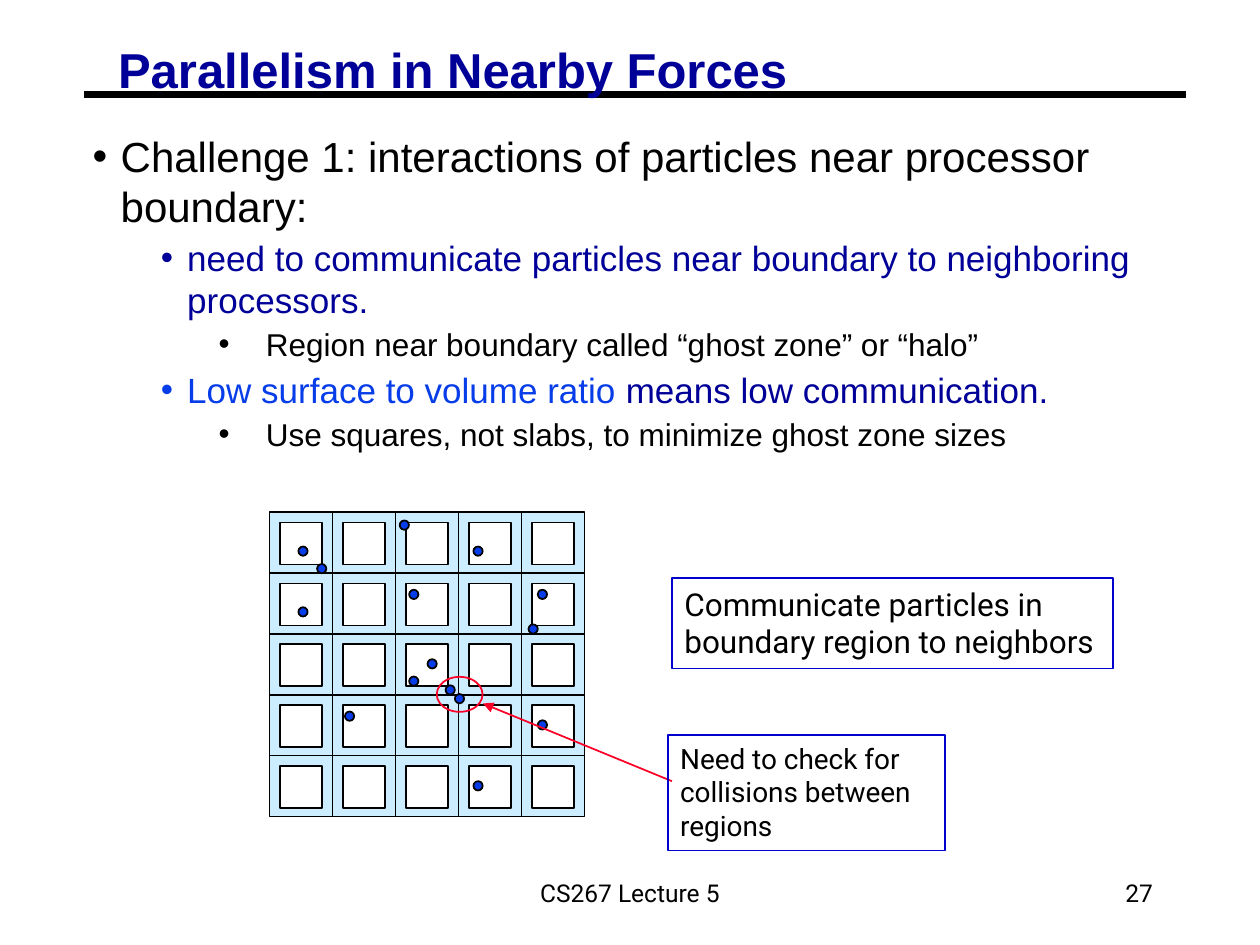
"""Build the slide on parallelism in nearby forces."""
from lxml import etree
from pptx import Presentation
from pptx.dml.color import RGBColor
from pptx.enum.shapes import MSO_CONNECTOR, MSO_SHAPE
from pptx.enum.text import MSO_ANCHOR, MSO_AUTO_SIZE, PP_ALIGN
from pptx.oxml.ns import qn
from pptx.util import Pt

RECT, OVAL = MSO_SHAPE.RECTANGLE, MSO_SHAPE.OVAL
LINE = MSO_CONNECTOR.STRAIGHT
TOP, MID = MSO_ANCHOR.TOP, MSO_ANCHOR.MIDDLE
LEFT, MIDDLE, RIGHT = PP_ALIGN.LEFT, PP_ALIGN.CENTER, PP_ALIGN.RIGHT
FIXED = MSO_AUTO_SIZE.NONE

THEME = {
    "head": "Arial", "note": "Roboto",
    "black": "000000", "white": "FFFFFF", "navy": "000099", "blue": "063DE8",
    "edge": "0000CC", "pale": "CCECFF", "red": "FC0128",
    "title": 28, "levels": (24, 20, 18), "foot": 14,
}
INDENTS = ((16, -16), (54, -15), (99, -27))

TITLE = "Parallelism in Nearby Forces"
BODY = [
    (0, [("Challenge 1: interactions of particles near processor boundary:", "black")]),
    (1, [("need to communicate particles near boundary to neighboring processors.", "navy")]),
    (2, [("Region near boundary called “ghost zone” or “halo”", "black")]),
    (1, [("Low surface to volume ratio ", "blue"), ("means low communication.", "navy")]),
    (2, [("Use squares, not slabs, to minimize ghost zone sizes", "black")]),
]
NOTES = [
    ("Communicate particles in boundary region to neighbors", (384, 330.5, 252, 51.5), 18),
    ("Need to check for collisions between regions", (381.6, 420, 158.4, 66), 16),
]
FOOTS = [
    ("CS267 Lecture 5", (246, 492, 228, 36), MIDDLE),
    ("27", (516, 492, 150, 36), RIGHT),
]
GRID = {"left": 154, "top": 292.6, "wide": 36, "high": 34.8, "count": 5, "inset": 6, "core": 24}
DOT = 5.3
DOTS = [
    (170.5, 312.3), (181.2, 322.3), (170.5, 347), (233.8, 386.6), (228.4, 297.4),
    (244.3, 376.7), (197.1, 406.6), (254.6, 391.6), (302, 356.8), (259.9, 396.6),
    (270.5, 312.3), (270.5, 446.4), (307.3, 411.6), (307.3, 337), (233.8, 337),
]
RING = (249.6, 386.8, 26.2, 20)


def color(name):
    return RGBColor.from_string(THEME[name])


def place(shape, box):
    shape.left, shape.top, shape.width, shape.height = map(Pt, box)


def setup(frame, pad=(7.2, 3.6), anchor=TOP):
    frame.word_wrap = True
    frame.auto_size = FIXED
    frame.vertical_anchor = anchor
    frame.margin_left = frame.margin_right = Pt(pad[0])
    frame.margin_top = frame.margin_bottom = Pt(pad[1])


def write(para, text, size, font="note", ink="black", bold=False, align=LEFT):
    para.alignment = align
    run = para.add_run()
    run.text = text
    run.font.size, run.font.bold = Pt(size), bold
    run.font.name = THEME[font]
    run.font.color.rgb = color(ink)


def bullet(para, level):
    para.level = level
    props = para._p.get_or_add_pPr()
    margin, indent = INDENTS[level]
    props.set("marL", str(Pt(margin)))
    props.set("indent", str(Pt(indent)))
    space = etree.SubElement(props, qn("a:spcBef"))
    etree.SubElement(space, qn("a:spcPct")).set("val", "15000")
    etree.SubElement(props, qn("a:buFont")).set("typeface", THEME["head"])
    etree.SubElement(props, qn("a:buChar")).set("char", "•")


def draw(shapes, kind, box, fill=None, edge="black"):
    shape = shapes.add_shape(kind, *map(Pt, box))
    shape.shadow.inherit = False
    if fill:
        shape.fill.solid()
        shape.fill.fore_color.rgb = color(fill)
    else:
        shape.fill.background()
    shape.line.color.rgb = color(edge)
    shape.line.width = Pt(1)
    return shape


def link(shapes, ends, ink, width, arrow=False):
    line = shapes.add_connector(LINE, *map(Pt, ends))
    line.line.color.rgb = color(ink)
    line.line.width = Pt(width)
    if arrow:
        tail = etree.SubElement(line.line._get_or_add_ln(), qn("a:tailEnd"))
        for key, value in (("type", "triangle"), ("w", "med"), ("len", "med")):
            tail.set(key, value)
    etree.SubElement(line.element.spPr, qn("a:effectLst"))
    return line


def heads(slide):
    title, body = slide.shapes.title, slide.placeholders[1]
    place(title, (62.5, 24.5, 531.5, 33))
    setup(title.text_frame, (5, 2.5))
    para = title.text_frame.paragraphs[0]
    para.line_spacing = 0.87
    write(para, TITLE, THEME["title"], font="head", ink="navy", bold=True)
    rule = link(slide.shapes, (48, 54, 678, 54), "black", 3.75)
    title.element.addprevious(rule.element)

    place(body, (48, 72, 630, 195))
    frame = body.text_frame
    setup(frame, (5, 2.5))
    for index, (level, runs) in enumerate(BODY):
        para = frame.add_paragraph() if index else frame.paragraphs[0]
        bullet(para, level)
        for text, ink in runs:
            write(para, text, THEME["levels"][level], font="head", ink=ink)


def grid(shapes):
    group = shapes.add_group_shape().shapes
    inset, core = GRID["inset"], GRID["core"]
    for col in range(GRID["count"]):
        for row in range(GRID["count"]):
            x = GRID["left"] + col * GRID["wide"]
            y = GRID["top"] + row * GRID["high"]
            draw(group, RECT, (x, y, GRID["wide"], GRID["high"]), fill="pale")
            draw(group, RECT, (x + inset, y + inset, core, core), fill="white")
    for x, y in DOTS:
        draw(shapes, OVAL, (x, y, DOT, DOT), fill="blue")
    draw(shapes, OVAL, RING, edge="red")
    link(shapes, (384, 446.4, 276, 402), "red", 1, arrow=True)


def main():
    deck = Presentation()
    deck.slide_width, deck.slide_height = Pt(720), Pt(540)
    slide = deck.slides.add_slide(deck.slide_layouts[1])
    heads(slide)
    for text, box, align in FOOTS:
        frame = slide.shapes.add_textbox(*map(Pt, box)).text_frame
        setup(frame, anchor=MID)
        write(frame.paragraphs[0], text, THEME["foot"], align=align)
    grid(slide.shapes)
    for text, box, size in NOTES:
        frame = draw(slide.shapes, RECT, box, edge="edge").text_frame
        setup(frame)
        write(frame.paragraphs[0], text, size)
    deck.save("out.pptx")


if __name__ == "__main__":
    main()
